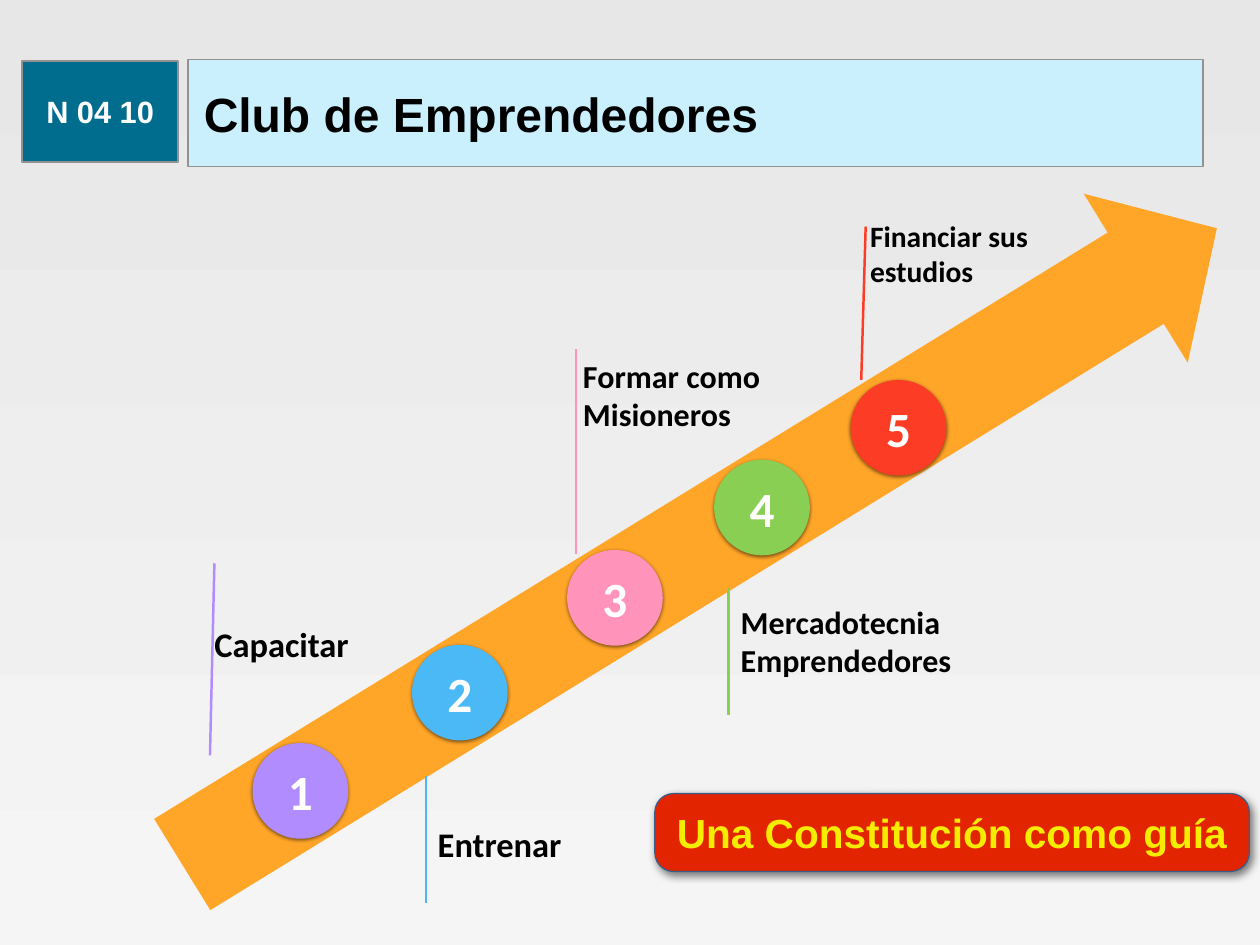
from typing import NamedTuple

from lxml.etree import SubElement
from pptx import Presentation
from pptx.dml.color import RGBColor
from pptx.enum.shapes import MSO_CONNECTOR, MSO_SHAPE
from pptx.enum.text import MSO_ANCHOR, PP_ALIGN
from pptx.oxml.ns import qn
from pptx.util import Pt

EMU_PER_PX = 9144
CIRCLE_SIZE = 108

BACKGROUND_TOP = RGBColor(0xE7, 0xE7, 0xE7)
BACKGROUND_BOTTOM = RGBColor(0xF5, 0xF5, 0xF5)
ORANGE = RGBColor(0xFF, 0xA5, 0x28)
PURPLE = RGBColor(0xB1, 0x8C, 0xFE)
BLUE = RGBColor(0x4C, 0xB9, 0xF7)
PINK = RGBColor(0xFF, 0x93, 0xBA)
GREEN = RGBColor(0x89, 0xCF, 0x53)
RED = RGBColor(0xFD, 0x3C, 0x25)
TEAL = RGBColor(0x00, 0x6D, 0x8F)
PALE_BLUE = RGBColor(0xCA, 0xF0, 0xFE)
GRAY = RGBColor(0x92, 0x92, 0x92)
BANNER_RED = RGBColor(0xE3, 0x24, 0x00)
BANNER_EDGE = RGBColor(0x38, 0x5D, 0x8A)
YELLOW = RGBColor(0xF5, 0xEC, 0x00)
BLACK = RGBColor(0x00, 0x00, 0x00)
WHITE = RGBColor(0xFF, 0xFF, 0xFF)


class Box(NamedTuple):
    """A rectangle in px."""
    left: int
    top: int
    width: int
    height: int

    def inner(self, left, top, width, height):
        """Return a box placed relative to this one."""
        return Box(self.left + left, self.top + top, width, height)


class Step(NamedTuple):
    """One milestone, with offsets from the roadmap box."""
    color: RGBColor
    circle: tuple
    line: tuple
    label: tuple
    text: str
    size: int


STEPS = [
    Step(PURPLE, (185, 639), (142, 436, 137, 653), (142, 462, 215, 129), "Capacitar", 28),
    Step(BLUE, (365, 528), (381, 676, 381, 820), (394, 703, 215, 99), "Entrenar", 28),
    Step(PINK, (540, 421), (550, 194, 550, 425), (558, 162, 240, 168),
         "Formar como Misioneros", 26),
    Step(GREEN, (706, 319), (722, 464, 722, 607), (736, 454, 303, 139),
         "Mercadotecnia\nEmprendedores", 26),
    Step(RED, (860, 229), (877, 56, 872, 229), (882, 32, 240, 108),
         "Financiar sus estudios", 24),
]


def emu(*lengths):
    """Turn px lengths into EMU."""
    return [length * EMU_PER_PX for length in lengths]


def write_text(shape, text, size, color, font="Calibri", align=PP_ALIGN.LEFT, inset=0):
    """Fill a shape with bold, vertically centred text."""
    frame = shape.text_frame
    frame.word_wrap = True
    frame.vertical_anchor = MSO_ANCHOR.MIDDLE
    frame.margin_left, frame.margin_top, frame.margin_right, frame.margin_bottom = emu(
        inset, inset, inset, inset)
    frame.text = text
    for paragraph in frame.paragraphs:
        paragraph.alignment = align
        paragraph.font.name = font
        paragraph.font.size = Pt(size)
        paragraph.font.bold = True
        paragraph.font.color.rgb = color


def add_filled(slide, kind, box, fill, line=None, line_width=1.25):
    """Add a flat preset shape."""
    shape = slide.shapes.add_shape(kind, *emu(*box))
    shape.shadow.inherit = False
    shape.fill.solid()
    shape.fill.fore_color.rgb = fill
    if line is None:
        shape.line.fill.background()
    else:
        shape.line.color.rgb = line
        shape.line.width = Pt(line_width)
    return shape


def add_shadow(shape, blur, distance, angle):
    """Give a shape a half-transparent black shadow."""
    effects = shape._element.spPr.find(qn("a:effectLst"))
    shadow = SubElement(effects, qn("a:outerShdw"), blurRad=str(Pt(blur)),
                        dist=str(Pt(distance)), dir=str(angle * 60000), rotWithShape="0")
    color = SubElement(shadow, qn("a:srgbClr"), val="000000")
    SubElement(color, qn("a:alpha"), val="50000")


def add_line(slide, ends, color):
    """Add a thin line between two points."""
    line = slide.shapes.add_connector(MSO_CONNECTOR.STRAIGHT, *emu(*ends))
    line.line.color.rgb = color
    line.line.width = Pt(2)
    SubElement(line._element.spPr, qn("a:effectLst"))


def add_header(slide, box):
    """Add the code tag and the title bar."""
    tag = add_filled(slide, MSO_SHAPE.RECTANGLE, box.inner(0, 2, 176, 114), TEAL, GRAY)
    write_text(tag, "N 04 10", 25, WHITE, font="Arial", align=PP_ALIGN.CENTER)
    title = add_filled(slide, MSO_SHAPE.RECTANGLE,
                       box.inner(187, 0, box.width - 187, box.height), PALE_BLUE, GRAY)
    write_text(title, "Club de Emprendedores", 39, BLACK, font="Arial", inset=18)


def add_step(slide, box, number, step):
    """Add one numbered milestone with its line and label."""
    x1, y1, x2, y2 = step.line
    add_line(slide, (box.left + x1, box.top + y1, box.left + x2, box.top + y2), step.color)
    circle = add_filled(slide, MSO_SHAPE.OVAL,
                        box.inner(*step.circle, CIRCLE_SIZE, CIRCLE_SIZE), step.color)
    add_shadow(circle, 3, 1, 90)
    write_text(circle, str(number), 40, WHITE, align=PP_ALIGN.CENTER)
    label = slide.shapes.add_textbox(*emu(*box.inner(*step.label)))
    write_text(label, step.text, step.size, BLACK)


def add_roadmap(slide, box):
    """Add the rising arrow and its milestones."""
    arrow = add_filled(slide, MSO_SHAPE.RIGHT_ARROW, box.inner(4, 305, 1371, 224), ORANGE)
    arrow.adjustments[0] = 0.54
    arrow.adjustments[1] = 0.48
    arrow.rotation = 328.4
    for number, step in enumerate(STEPS, 1):
        add_step(slide, box, number, step)


def add_banner(slide, box):
    """Add the closing message."""
    banner = add_filled(slide, MSO_SHAPE.ROUNDED_RECTANGLE, box, BANNER_RED, BANNER_EDGE, 1)
    banner.adjustments[0] = 0.24
    add_shadow(banner, 7, 3, 57)
    write_text(banner, "Una Constitución como guía", 33, YELLOW,
               font="Arial", align=PP_ALIGN.CENTER)


def paint_background(slide):
    """Fill the background with a vertical gradient."""
    fill = slide.background.fill
    fill.gradient()
    fill.gradient_angle = 270
    for stop, color in zip(fill.gradient_stops, (BACKGROUND_TOP, BACKGROUND_BOTTOM)):
        stop.color.rgb = color


def main():
    """Build and save the slide."""
    presentation = Presentation()
    presentation.slide_width, presentation.slide_height = emu(1422, 1067)
    slide = presentation.slides.add_slide(presentation.slide_layouts[6])
    paint_background(slide)
    add_roadmap(slide, Box(100, 200, 1300, 840))
    add_header(slide, Box(25, 67, 1333, 121))
    add_banner(slide, Box(739, 896, 671, 88))
    presentation.save("out.pptx")


if __name__ == "__main__":
    main()
